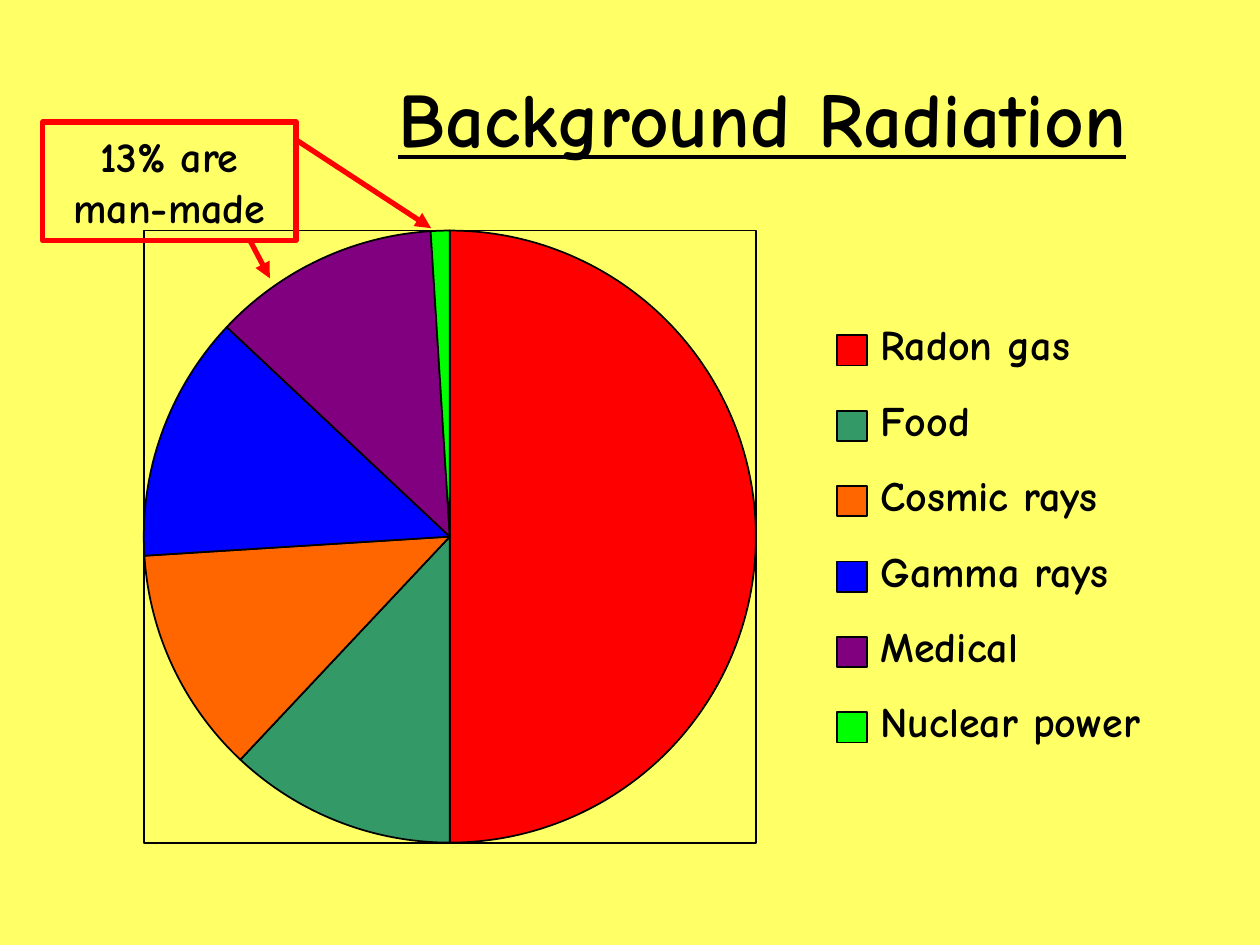
from dataclasses import dataclass

from lxml import etree
from pptx import Presentation
from pptx import util as u
from pptx.chart import data as cd
from pptx.dml.color import RGBColor
from pptx.enum import chart as ec, shapes as es, text as et
from pptx.oxml import ns, parse_xml

TITLE = "Background Radiation"
NOTE = "13% are man-made"
SOURCES = [
    ("Radon gas", 50, "FF0000"),
    ("Food", 12, "339966"),
    ("Cosmic rays", 12, "FF6600"),
    ("Gamma rays", 13, "0000FF"),
    ("Medical", 12, "800080"),
    ("Nuclear power", 1, "00FF00"),
]
ARROWS = [((5.03, 4.83), (5.44, 5.61)), ((5.97, 2.82), (8.69, 4.6))]

# Lengths in cm
FRAME = (2.9, 4.65, 12.34)  # left, top, side
PAD = 0.25                  # room around the pie for its outline
KEY = (16.87, 6.76, 1.52)   # left, top, pitch
BOX = 0.61                  # side of a legend square


@dataclass
class Theme:
    font: str = "Comic Neue"
    back: str = "FFFF66"
    ink: str = "000000"
    mark: str = "FF0000"
    big: int = 44
    body: int = 24
    thin: float = 1
    thick: float = 3


theme = Theme()


def cm(*sizes):
    return [u.Cm(size) for size in sizes]


def rgb(code):
    return RGBColor.from_string(code)


def stroke(line, color, width):
    line.color.rgb = rgb(color)
    line.width = u.Pt(width)


def rect(shapes, area, line, width, fill=None):
    shape = shapes.add_shape(es.MSO_SHAPE.RECTANGLE, *cm(*area))
    shape.shadow.inherit = False
    if fill:
        shape.fill.solid()
        shape.fill.fore_color.rgb = rgb(fill)
    else:
        shape.fill.background()
    stroke(shape.line, line, width)
    return shape


def write(shape, words, size, align, under=None):
    frame = shape.text_frame
    frame.text = words
    frame.word_wrap = True
    frame.vertical_anchor = et.MSO_ANCHOR.MIDDLE
    para = frame.paragraphs[0]
    para.alignment = align
    font = para.font
    font.name, font.size, font.bold = theme.font, u.Pt(size), True
    font.underline = under
    font.color.rgb = rgb(theme.ink)
    return frame


def add_pie(shapes):
    left, top, side = FRAME
    full = side + 2 * PAD
    data = cd.CategoryChartData()
    data.categories = [name for name, _, _ in SOURCES]
    data.add_series(TITLE, [share for _, share, _ in SOURCES])
    chart = shapes.add_chart(
        ec.XL_CHART_TYPE.PIE, *cm(left - PAD, top - PAD, full, full), data
    ).chart
    chart.has_title = chart.has_legend = False
    chart.font.name, chart.font.size = theme.font, u.Pt(theme.body)
    chart.font.color.rgb = rgb(theme.ink)
    plot = chart.plots[0]
    plot.vary_by_categories = True
    for i, (_, _, color) in enumerate(SOURCES):
        form = plot.series[0].points[i].format
        form.fill.solid()
        form.fill.fore_color.rgb = rgb(color)
        stroke(form.line, theme.ink, theme.thin)
    fit_plot(chart, PAD / full, side / full)


def fit_plot(chart, start, span):
    """Fix the pie at a fraction of the chart area and clear the backdrop."""
    area = chart._chartSpace.chart.plotArea
    for old in area.findall(ns.qn("c:layout")):
        area.remove(old)
    parts = [("layoutTarget", "inner"), ("xMode", "edge"), ("yMode", "edge"),
             ("x", start), ("y", start), ("w", span), ("h", span)]
    inner = "".join(f'<c:{tag} val="{val}"/>' for tag, val in parts)
    area.insert(0, parse_xml(
        f'<c:layout {ns.nsdecls("c")}><c:manualLayout>{inner}'
        '</c:manualLayout></c:layout>'))
    chart._chartSpace.chart.addnext(parse_xml(
        f'<c:spPr {ns.nsdecls("c", "a")}><a:noFill/>'
        '<a:ln><a:noFill/></a:ln></c:spPr>'))


def add_key(shapes):
    left, top, pitch = KEY
    for i, (name, _, color) in enumerate(SOURCES):
        y = top + i * pitch
        group = shapes.add_group_shape().shapes
        rect(group, (left, y, BOX, BOX), theme.ink, theme.thin, color)
        label = group.add_textbox(*cm(left + 0.88, y - 0.33, 5.87, 1.02))
        frame = write(label, name, theme.body, et.PP_ALIGN.LEFT)
        frame.word_wrap = False
        frame.vertical_anchor = et.MSO_ANCHOR.TOP
        frame.margin_left = frame.margin_right = 0
        frame.margin_top = frame.margin_bottom = 0


def add_note(shapes):
    group = shapes.add_group_shape().shapes
    box = rect(group, (0.86, 2.46, 5.11, 2.39), theme.mark, theme.thick)
    write(box, NOTE, theme.body, et.PP_ALIGN.CENTER)
    for start, end in ARROWS:
        arrow = group.add_connector(
            es.MSO_CONNECTOR.STRAIGHT, *cm(*start, *end))
        stroke(arrow.line, theme.mark, theme.thick)
        tail = etree.SubElement(arrow.line._get_or_add_ln(), ns.qn("a:tailEnd"))
        tail.set("type", "triangle")
        etree.SubElement(arrow._element.spPr, ns.qn("a:effectLst"))


def main():
    deck = Presentation()
    deck.slide_width, deck.slide_height = cm(25.4, 19.05)
    slide = deck.slides.add_slide(deck.slide_layouts[6])
    slide.background.fill.solid()
    slide.background.fill.fore_color.rgb = rgb(theme.back)
    shapes = slide.shapes
    title = shapes.add_textbox(*cm(6.63, 0.76, 17.48, 3.18))
    write(title, TITLE, theme.big, et.PP_ALIGN.CENTER, True)
    left, top, side = FRAME
    rect(shapes, (left, top, side, side), theme.ink, theme.thin)
    add_pie(shapes)
    add_key(shapes)
    add_note(shapes)
    deck.save("out.pptx")


if __name__ == "__main__":
    main()
